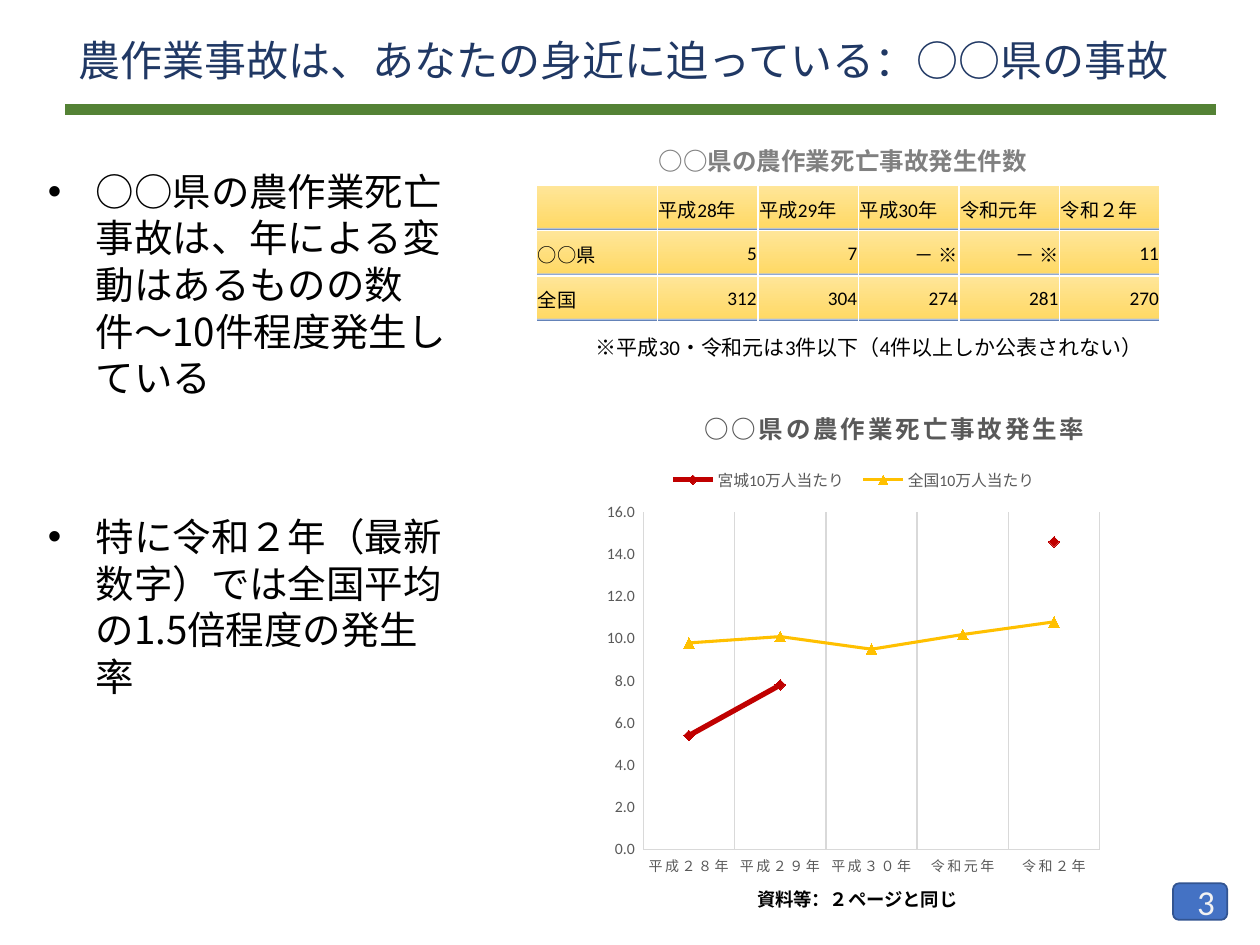
import lxml.etree
import pptx
import pptx.chart.data
import pptx.dml.color
import pptx.enum.chart
import pptx.enum.dml
import pptx.enum.shapes
import pptx.enum.text
import pptx.oxml
import pptx.oxml.ns
import pptx.util

Pt = pptx.util.Pt
RGB = pptx.dml.color.RGBColor
ALIGN = pptx.enum.text.PP_ALIGN
ANCHOR = pptx.enum.text.MSO_ANCHOR
MARKER = pptx.enum.chart.XL_MARKER_STYLE
qn = pptx.oxml.ns.qn

SLIDE_WIDTH, SLIDE_HEIGHT = pptx.util.Inches(10), pptx.util.Inches(7.5)
LATIN, JAPANESE = "Calibri", "Noto Sans CJK JP"
BLACK, WHITE = RGB(0, 0, 0), RGB(255, 255, 255)
NAVY, GREEN = RGB(0x20, 0x38, 0x64), RGB(0x54, 0x82, 0x35)
BLUE, BLUE_EDGE = RGB(0x44, 0x72, 0xC4), RGB(0x32, 0x54, 0x91)
PALE, GRAY = RGB(0xF2, 0xF2, 0xF2), RGB(0x80, 0x80, 0x80)
DARK_GRAY, GRID_GRAY = RGB(0x59, 0x59, 0x59), RGB(0xD9, 0xD9, 0xD9)
RED, GOLD = RGB(0xC0, 0, 0), RGB(0xFF, 0xC0, 0)
CELL_STOPS = [(0, RGB(0xFF, 0xE6, 0x99)), (93, RGB(0xFF, 0xD9, 0x66)),
              (96, RGB(0xAB, 0xC0, 0xE4)), (100, RGB(0x2F, 0x55, 0x97))]

COUNTS = [
    ["", "平成28年", "平成29年", "平成30年", "令和元年", "令和２年"],
    ["○○県", "5", "7", "－ ※", "－ ※", "11"],
    ["全国", "312", "304", "274", "281", "270"],
]
YEARS = ["平成２８年", "平成２９年", "平成３０年", "令和元年", "令和２年"]
RATES = [
    ("宮城10万人当たり", [5.4, 7.8, None, None, 14.6], RED, 3, MARKER.DIAMOND),
    ("全国10万人当たり", [9.8, 10.1, 9.5, 10.2, 10.8], GOLD, 1.75, MARKER.TRIANGLE),
]


def share(left, top, width, height):
    """Turn percentages of the slide into a box."""
    return (int(SLIDE_WIDTH * left / 100), int(SLIDE_HEIGHT * top / 100),
            int(SLIDE_WIDTH * width / 100), int(SLIDE_HEIGHT * height / 100))


def style_font(font, size, color, name=LATIN, bold=False):
    """Set the usual properties of a font."""
    font.size, font.name, font.bold = Pt(size), name, bold
    font.color.rgb = color


def write(frame, text, size, color, name=LATIN, bold=False, align=ALIGN.LEFT):
    """Fill a text frame with one formatted paragraph and return it."""
    frame.text = text
    para = frame.paragraphs[0]
    para.alignment = align
    for span in para.runs:
        style_font(span.font, size, color, name, bold)
        east = lxml.etree.SubElement(span.font._element, qn("a:ea"))
        east.set("typeface", JAPANESE)
    return para


def fill_placeholder(shape, box, text, size, color):
    """Move a placeholder to the box and write its text."""
    shape.left, shape.top, shape.width, shape.height = box
    frame = shape.text_frame
    frame.auto_size = pptx.enum.text.MSO_AUTO_SIZE.NONE
    frame.vertical_anchor = ANCHOR.TOP
    para = write(frame, text, size, color, JAPANESE)
    para.space_before = Pt(0)
    para.line_spacing = Pt(round(size * 1.21, 1))
    return para


def add_bullet(shape, box, text):
    """Write one hanging bullet in a body placeholder."""
    para = fill_placeholder(shape, box, text, 22, BLACK)
    properties = para._p.get_or_add_pPr()
    indent = pptx.util.Inches(0.38)
    properties.set("marL", str(indent))
    properties.set("indent", str(-indent))
    lxml.etree.SubElement(properties, qn("a:buFont")).set("typeface", "Arial")
    lxml.etree.SubElement(properties, qn("a:buChar")).set("char", "•")


def add_label(page, box, text, size, color, bold=False, align=ALIGN.LEFT, anchor=ANCHOR.TOP):
    """Add a wrapped text box."""
    frame = page.shapes.add_textbox(*box).text_frame
    frame.word_wrap = True
    frame.vertical_anchor = anchor
    write(frame, text, size, color, bold=bold, align=align)


def add_rule(page, box):
    """Draw the green rule along the top of the box."""
    left, top, width, _ = box
    rule = page.shapes.add_connector(
        pptx.enum.shapes.MSO_CONNECTOR.STRAIGHT, left, top, left + width, top)
    rule.line.color.rgb, rule.line.width = GREEN, Pt(6)
    lxml.etree.SubElement(rule._element.spPr, qn("a:effectLst"))


def add_page_number(page, box, number):
    """Draw the rounded badge with the page number at its right."""
    badge = page.shapes.add_shape(pptx.enum.shapes.MSO_SHAPE.ROUNDED_RECTANGLE, *box)
    badge.shadow.inherit = False
    badge.fill.solid()
    badge.fill.fore_color.rgb = BLUE
    badge.line.color.rgb, badge.line.width = BLUE_EDGE, Pt(1)
    add_label(page, box, number, 20, PALE, align=ALIGN.RIGHT, anchor=ANCHOR.MIDDLE)


def paint_cell(cell):
    """Give a cell white borders and the gold gradient."""
    properties = cell._tc.get_or_add_tcPr()
    namespace = pptx.oxml.ns.nsdecls("a")
    for side in "LRTB":
        properties.append(pptx.oxml.parse_xml(
            f'<a:ln{side} {namespace} w="12700"><a:solidFill><a:srgbClr val="{WHITE}"/>'
            f'</a:solidFill></a:ln{side}>'))
    stops = "".join(f'<a:gs pos="{place * 1000}"><a:srgbClr val="{color}"/></a:gs>'
                    for place, color in CELL_STOPS)
    properties.append(pptx.oxml.parse_xml(
        f'<a:gradFill {namespace}><a:gsLst>{stops}</a:gsLst>'
        '<a:lin ang="5400000" scaled="0"/></a:gradFill>'))


def add_count_table(page, box):
    """Add the table of fatal accident counts."""
    table = page.shapes.add_table(len(COUNTS), len(COUNTS[0]), *box).table
    table.first_row = table.horz_banding = False
    weights = [1.2] + [1] * len(YEARS)
    for column, weight in zip(table.columns, weights):
        column.width = int(box[2] * weight / sum(weights))
    for row_index, row in enumerate(COUNTS):
        for column_index, text in enumerate(row):
            cell = table.cell(row_index, column_index)
            cell.margin_left = cell.margin_right = cell.margin_top = pptx.util.Inches(0.01)
            cell.margin_bottom = 0
            cell.vertical_anchor = ANCHOR.MIDDLE
            align = ALIGN.RIGHT if row_index and column_index else ALIGN.LEFT
            write(cell.text_frame, text, 11, BLACK, align=align)
            paint_cell(cell)


def set_layout(parent, index, inner=False, **shares):
    """Place a chart part by shares of the chart area."""
    for old in parent.findall(qn("c:layout")):
        parent.remove(old)
    target = '<c:layoutTarget val="inner"/>' if inner else ""
    modes = "".join(f'<c:{key}Mode val="edge"/>' for key in "xy")
    values = "".join(f'<c:{key} val="{value}"/>' for key, value in shares.items())
    parent.insert(index, pptx.oxml.parse_xml(
        f'<c:layout {pptx.oxml.ns.nsdecls("c")}><c:manualLayout>{target}{modes}{values}'
        '</c:manualLayout></c:layout>'))


def style_axis(axis, size):
    """Give an axis gray labels and a thin line without ticks."""
    axis.major_tick_mark = axis.minor_tick_mark = pptx.enum.chart.XL_TICK_MARK.NONE
    style_font(axis.tick_labels.font, size, DARK_GRAY)
    axis.format.line.color.rgb, axis.format.line.width = GRID_GRAY, Pt(0.75)


def add_rate_chart(page, box):
    """Add the line chart of accident rates."""
    data = pptx.chart.data.CategoryChartData(number_format="0.0_ ")
    data.categories = YEARS
    for name, values, *_ in RATES:
        data.add_series(name, values)
    chart = page.shapes.add_chart(
        pptx.enum.chart.XL_CHART_TYPE.LINE_MARKERS, *box, data).chart
    style_font(chart.font, 10, BLACK)
    title = chart.chart_title
    para = write(title.text_frame, "○○県の農作業死亡事故発生率", 14, DARK_GRAY, bold=True)
    para.runs[0].font._element.set("spc", "140")
    set_layout(title._element, 1, x=0.2, y=0.03)
    chart.has_legend = True
    chart.legend.position = pptx.enum.chart.XL_LEGEND_POSITION.TOP
    chart.legend.include_in_layout = False
    style_font(chart.legend.font, 9, DARK_GRAY)
    set_layout(chart.legend._element, 1, x=0.12, y=0.15, w=0.76, h=0.07)
    set_layout(chart._chartSpace.chart.plotArea, 0, True, x=0.09, y=0.25, w=0.89, h=0.67)
    years, rates = chart.category_axis, chart.value_axis
    style_axis(years, 8)
    style_axis(rates, 9)
    years._element.find(".//" + qn("a:defRPr")).set("spc", "120")
    years.has_major_gridlines, rates.has_major_gridlines = True, False
    grid = years.major_gridlines.format.line
    grid.color.rgb, grid.width = GRID_GRAY, Pt(0.75)
    rates.minimum_scale, rates.maximum_scale, rates.major_unit = 0, 16, 2
    rates.tick_labels.number_format = "0.0_ "
    rates.tick_labels.number_format_is_linked = False
    for series, (_, _, color, width, marker) in zip(chart.plots[0].series, RATES):
        series.smooth = False
        series.format.line.color.rgb, series.format.line.width = color, Pt(width)
        series.marker.style, series.marker.size = marker, 6
        series.marker.format.fill.solid()
        series.marker.format.fill.fore_color.rgb = color
        series.marker.format.line.color.rgb = color


def main():
    """Build the slide and save it."""
    deck = pptx.Presentation()
    deck.slide_width, deck.slide_height = SLIDE_WIDTH, SLIDE_HEIGHT
    page = deck.slides.add_slide(deck.slide_layouts.get_by_name("Two Content"))
    title, first, second = list(page.placeholders)[:3]
    fill_placeholder(title, share(5.2, 2.93, 92.3, 6.67),
                     "農作業事故は、あなたの身近に迫っている：○○県の事故", 24, NAVY)
    add_bullet(first, share(2.8, 17.07, 34.2, 26),
               "○○県の農作業死亡事故は、年による変動はあるものの数件～10件程度発生している")
    add_bullet(second, share(2.8, 53.6, 34.2, 21.07),
               "特に令和２年（最新数字）では全国平均の1.5倍程度の発生率")
    add_rule(page, share(5.2, 11.6, 91.3, 0))
    add_label(page, share(51.3, 14.8, 31.3, 4.53), "○○県の農作業死亡事故発生件数", 14, GRAY, True)
    add_count_table(page, share(42.6, 19.6, 49.5, 14.4))
    add_label(page, share(46.3, 34.8, 45.9, 4),
              "※平成30・令和元は3件以下（4件以上しか公表されない）", 12, BLACK)
    add_rate_chart(page, share(47.4, 40.93, 40.7, 53.2))
    add_label(page, share(59.1, 93.33, 20.1, 3.73), "資料等：２ページと同じ", 10.5, BLACK, True)
    add_page_number(page, share(93.1, 93.47, 4.3, 3.87), "3")
    deck.save("out.pptx")


if __name__ == "__main__":
    main()
